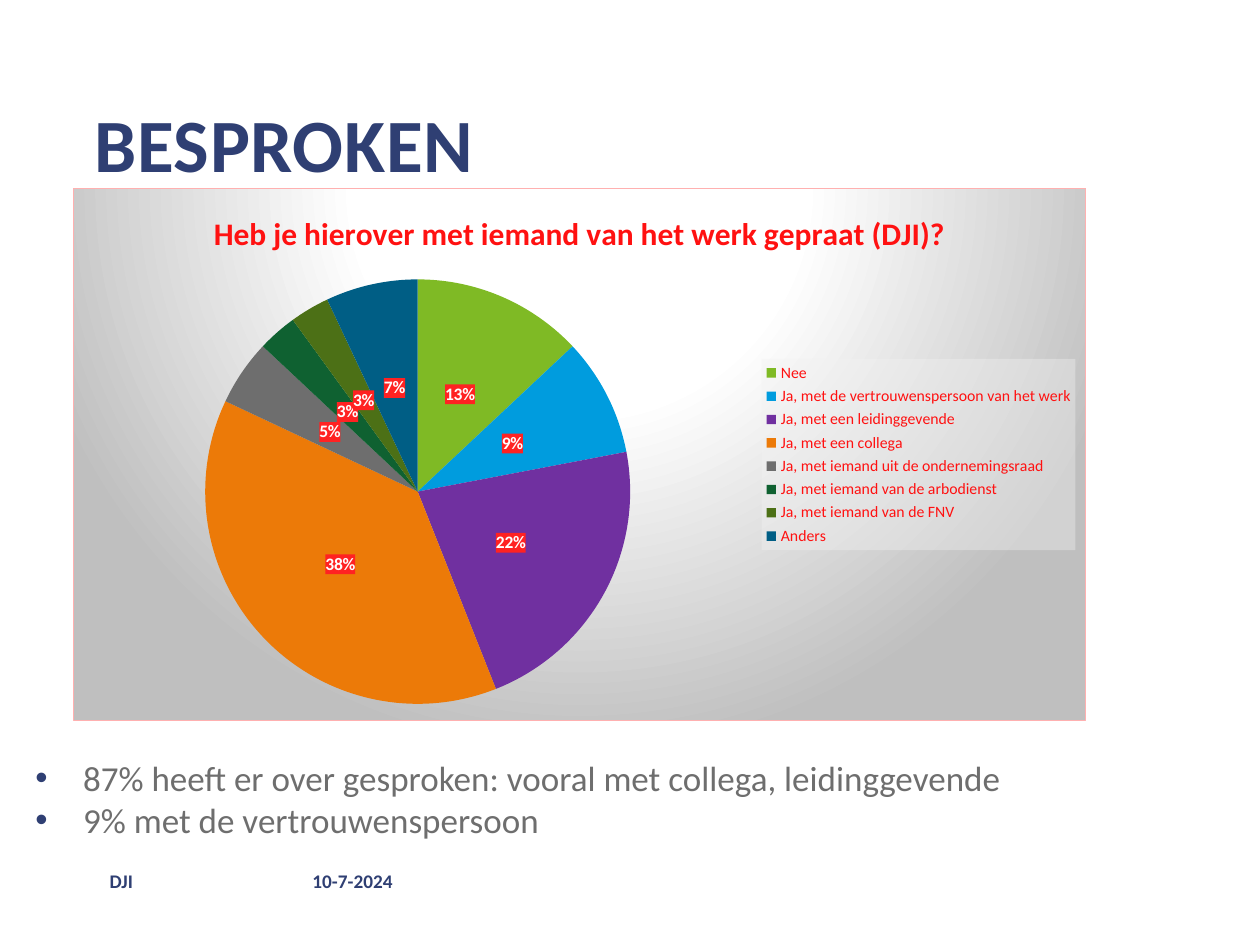
import dataclasses

import lxml.etree
import pptx
import pptx.chart.data
import pptx.dml.color
import pptx.enum.chart
import pptx.enum.text
import pptx.oxml
import pptx.oxml.ns
import pptx.util

WIDTH, HEIGHT = 10, 7.5
FONT = "Calibri"
COLOURS = {"navy": "2F3F73", "grey": "6E6E6E", "red": "FF1111", "label": "FF2222",
           "white": "FFFFFF", "silver": "BFBFBF", "border": "FFB0B0", "legend": "F2F2F2"}
NAMESPACES = " ".join(pptx.oxml.ns.nsdecls(prefix) for prefix in ("a", "c"))

ANSWERS = [
    ("Nee", 13, "7FBA25"),
    ("Ja, met de vertrouwenspersoon van het werk", 9, "009CDE"),
    ("Ja, met een leidinggevende", 22, "7030A0"),
    ("Ja, met een collega", 38, "EC7A08"),
    ("Ja, met iemand uit de ondernemingsraad", 5, "6E6E6E"),
    ("Ja, met iemand van de arbodienst", 3, "0F6131"),
    ("Ja, met iemand van de FNV", 3, "4C7016"),
    ("Anders", 7, "005E85"),
]


@dataclasses.dataclass
class Area:
    """A rectangle in shares of the slide, or of the chart."""
    left: float
    top: float
    width: float
    height: float

    def on_slide(self) -> list:
        return [pptx.util.Inches(share * side) for share, side in
                zip((self.left, self.top, self.width, self.height), (WIDTH, HEIGHT) * 2)]


@dataclasses.dataclass
class TextBlock:
    area: Area
    lines: list
    size: float
    colour: str = "navy"
    bold: bool = True
    middle: bool = False
    bullets: bool = False
    spacing: int = 0


TEXTS = [
    TextBlock(Area(0.075, 0.103, 0.63, 0.096), ["BESPROKEN"], 43, spacing=40),
    TextBlock(Area(0.028, 0.801, 0.961, 0.136),
              ["87% heeft er over gesproken: vooral met collega, leidinggevende",
               "9% met de vertrouwenspersoon"], 20, "grey", bold=False, bullets=True),
    TextBlock(Area(0.087, 0.919, 0.15, 0.027), ["DJI"], 11, middle=True),
    TextBlock(Area(0.248, 0.919, 0.13, 0.027), ["10-7-2024"], 11, middle=True),
]


def style_font(font, size: float, colour: str, bold: bool = False) -> None:
    font.name, font.size, font.bold = FONT, pptx.util.Pt(size), bold
    font.color.rgb = pptx.dml.color.RGBColor.from_string(COLOURS[colour])


def add_bullet(paragraph) -> None:
    properties = paragraph._p.get_or_add_pPr()
    indent = pptx.util.Inches(0.38)
    properties.set("marL", str(indent))
    properties.set("indent", str(-indent))
    colour = lxml.etree.SubElement(properties, pptx.oxml.ns.qn("a:buClr"))
    lxml.etree.SubElement(colour, pptx.oxml.ns.qn("a:srgbClr"), val=COLOURS["navy"])
    lxml.etree.SubElement(properties, pptx.oxml.ns.qn("a:buFont"), typeface="Arial")
    lxml.etree.SubElement(properties, pptx.oxml.ns.qn("a:buChar"), char="•")


def add_text(page, block: TextBlock) -> None:
    frame = page.shapes.add_textbox(*block.area.on_slide()).text_frame
    frame.margin_left = frame.margin_right = frame.margin_top = frame.margin_bottom = 0
    frame.word_wrap = True
    anchors = pptx.enum.text.MSO_ANCHOR
    frame.vertical_anchor = anchors.MIDDLE if block.middle else anchors.TOP
    frame.text = "\n".join(block.lines)
    for paragraph in frame.paragraphs:
        if block.bullets:
            add_bullet(paragraph)
        for span in paragraph.runs:
            style_font(span.font, block.size, block.colour, block.bold)
            if block.spacing:
                span._r.get_or_add_rPr().set("spc", str(block.spacing))


def solid_properties(colour: str, opacity: int = 100):
    return pptx.oxml.parse_xml(
        f'<c:spPr {NAMESPACES}><a:solidFill><a:srgbClr val="{COLOURS[colour]}">'
        f'<a:alpha val="{opacity * 1000}"/></a:srgbClr></a:solidFill></c:spPr>')


def backdrop_properties():
    stops = "".join(f'<a:gs pos="{share * 1000}"><a:srgbClr val="{COLOURS[name]}"/></a:gs>'
                    for share, name in ((0, "white"), (39, "white"), (100, "silver")))
    return pptx.oxml.parse_xml(
        f'<c:spPr {NAMESPACES}><a:gradFill><a:gsLst>{stops}</a:gsLst><a:path path="circle">'
        '<a:fillToRect l="50000" t="-80000" r="50000" b="180000"/></a:path></a:gradFill>'
        f'<a:ln w="{pptx.util.Pt(0.75)}"><a:solidFill><a:srgbClr val="{COLOURS["border"]}"/>'
        '</a:solidFill></a:ln></c:spPr>')


def set_layout(parent, area: Area, index: int, inner: bool = False) -> None:
    for old in parent.findall(pptx.oxml.ns.qn("c:layout")):
        parent.remove(old)
    target = '<c:layoutTarget val="inner"/>' if inner else ""
    parent.insert(index, pptx.oxml.parse_xml(
        f'<c:layout {NAMESPACES}><c:manualLayout>{target}'
        '<c:xMode val="edge"/><c:yMode val="edge"/>'
        f'<c:x val="{area.left}"/><c:y val="{area.top}"/>'
        f'<c:w val="{area.width}"/><c:h val="{area.height}"/></c:manualLayout></c:layout>'))


def add_pie(page, area: Area) -> None:
    data = pptx.chart.data.CategoryChartData()
    names, values, colours = zip(*ANSWERS)
    data.categories = names
    data.add_series("Series 1", values)
    chart = page.shapes.add_chart(pptx.enum.chart.XL_CHART_TYPE.PIE,
                                  *area.on_slide(), data).chart
    style_font(chart.font, 10, "red")

    # Title
    chart.has_title = True
    title = chart.chart_title.text_frame
    title.text = "Heb je hierover met iemand van het werk gepraat (DJI)?"
    style_font(title.paragraphs[0].runs[0].font, 18, "red", bold=True)

    # Legend
    chart.has_legend = True
    chart.legend.position = pptx.enum.chart.XL_LEGEND_POSITION.RIGHT
    chart.legend.include_in_layout = False
    style_font(chart.legend.font, 9, "red")

    # Slices and their labels
    plot = chart.plots[0]
    plot.vary_by_categories = True
    for index, colour in enumerate(colours):
        fill = plot.series[0].points[index].format.fill
        fill.solid()
        fill.fore_color.rgb = pptx.dml.color.RGBColor.from_string(colour)
    labels = plot.series[0].data_labels
    labels.show_percentage, labels.show_value = True, False
    labels.number_format, labels.number_format_is_linked = "0%", False
    labels.position = pptx.enum.chart.XL_LABEL_POSITION.CENTER
    style_font(labels.font, 10, "white", bold=True)

    # Backgrounds and placement
    root = chart.element
    root.xpath(".//c:ser/c:dLbls/c:txPr")[0].addprevious(solid_properties("label"))
    legend = root.xpath(".//c:legend")[0]
    legend.xpath("c:txPr")[0].addprevious(solid_properties("legend", 39))
    root.xpath("c:chart")[0].addnext(backdrop_properties())
    set_layout(legend, Area(0.68, 0.32, 0.31, 0.36), 1)
    set_layout(root.xpath(".//c:plotArea")[0], Area(0.13, 0.17, 0.42, 0.8), 0, inner=True)


def main() -> None:
    deck = pptx.Presentation()
    deck.slide_width = pptx.util.Inches(WIDTH)
    deck.slide_height = pptx.util.Inches(HEIGHT)
    page = deck.slides.add_slide(deck.slide_layouts[6])
    for block in TEXTS:
        add_text(page, block)
    add_pie(page, Area(0.058, 0.199, 0.804, 0.564))
    deck.save("out.pptx")


if __name__ == "__main__":
    main()
